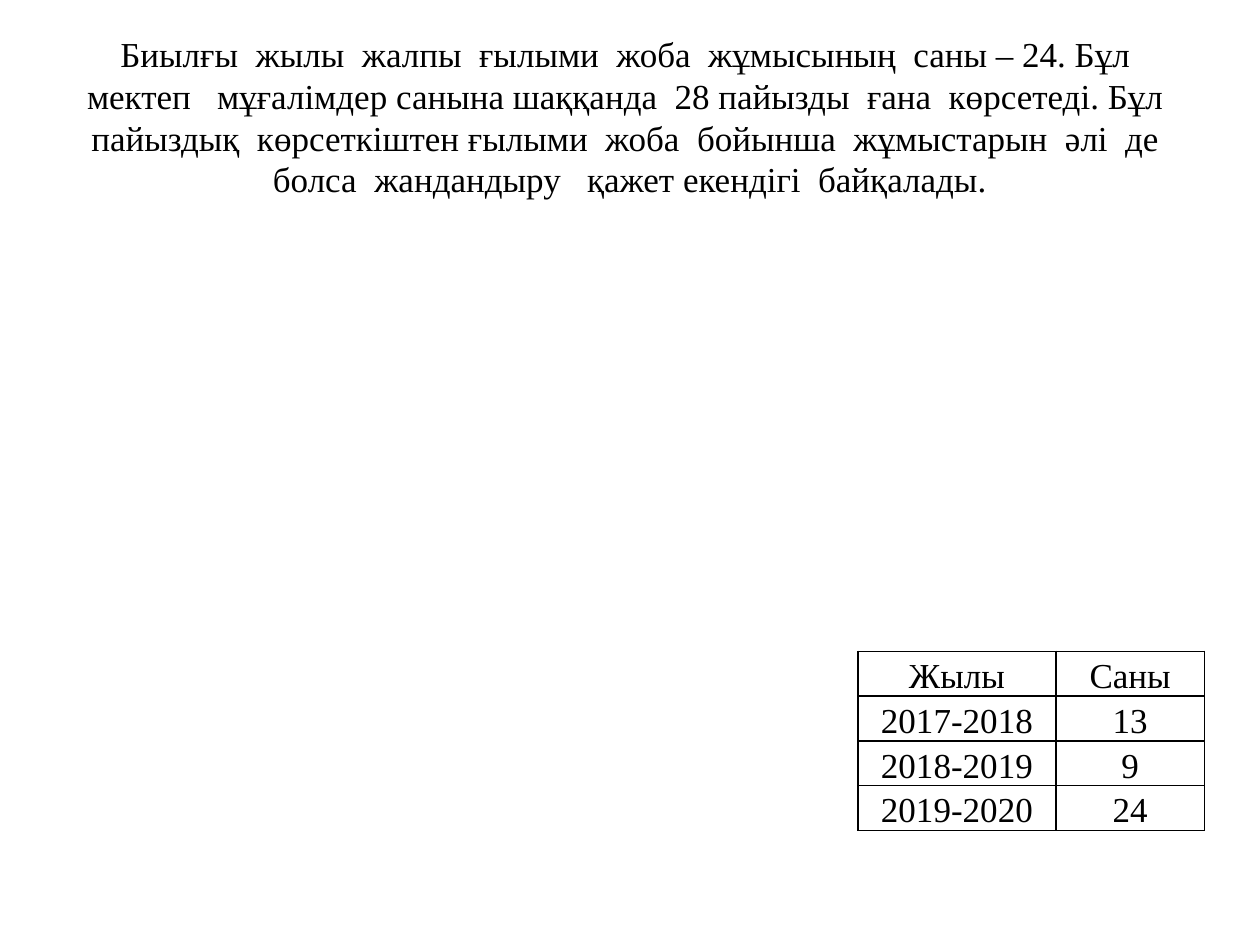
from lxml import etree
from pptx import Presentation
from pptx.dml.color import RGBColor
from pptx.enum.text import MSO_ANCHOR, MSO_AUTO_SIZE, PP_ALIGN
from pptx.oxml.ns import qn
from pptx.util import Pt

BLACK = "000000"


def format_paragraph(paragraph, size, line_spacing):
    paragraph.alignment = PP_ALIGN.CENTER
    paragraph.line_spacing = line_spacing
    for run in paragraph.runs:
        run.font.name = "Times New Roman"
        run.font.size = Pt(size)
        run.font.color.rgb = RGBColor.from_string(BLACK)


def add_borders(cell, color, width):
    properties = cell._tc.get_or_add_tcPr()
    for position, side in enumerate(("lnL", "lnR", "lnT", "lnB")):
        line = etree.Element(qn(f"a:{side}"), w=str(Pt(width)))
        fill = etree.SubElement(line, qn("a:solidFill"))
        etree.SubElement(fill, qn("a:srgbClr"), val=color)
        properties.insert(position, line)


presentation = Presentation()
presentation.slide_width = Pt(720)
presentation.slide_height = Pt(540)
slide = presentation.slides.add_slide(presentation.slide_layouts[5])

# Title paragraph
title = slide.shapes.title
title.left, title.top, title.width, title.height = Pt(36), Pt(21.6), Pt(648), Pt(90)
title_frame = title.text_frame
title_frame.text = (
    "Биылғы  жылы  жалпы  ғылыми  жоба  жұмысының  саны – 24. "
    "Бұл  мектеп   мұғалімдер санына шаққанда  28 пайызды  ғана  көрсетеді. "
    "Бұл  пайыздық  көрсеткіштен ғылыми  жоба  бойынша  жұмыстарын  әлі  де  "
    "болса  жандандыру   қажет екендігі  байқалады."
)
title_frame.word_wrap = True
title_frame.auto_size = MSO_AUTO_SIZE.NONE
title_frame.vertical_anchor = MSO_ANCHOR.MIDDLE
format_paragraph(title_frame.paragraphs[0], 20, Pt(23.8))

# Table of projects by school year
rows = [("Жылы", "Саны"), ("2017-2018", "13"), ("2018-2019", "9"), ("2019-2020", "24")]
column_widths = [113, 85]
row_height = 25.6
table = slide.shapes.add_table(
    len(rows), len(column_widths), Pt(490.3), Pt(372.2),
    Pt(sum(column_widths)), Pt(row_height * len(rows)),
).table
for column, width in zip(table.columns, column_widths):
    column.width = Pt(width)

for row_index, values in enumerate(rows):
    table.rows[row_index].height = Pt(row_height)
    for column_index, value in enumerate(values):
        cell = table.cell(row_index, column_index)
        cell.text = value
        cell.fill.background()
        cell.margin_left = cell.margin_right = Pt(5)
        cell.margin_top = cell.margin_bottom = 0
        paragraph = cell.text_frame.paragraphs[0]
        format_paragraph(paragraph, 20, 1.15)
        paragraph.runs[0].font.bold = False
        add_borders(cell, BLACK, 1)

presentation.save("out.pptx")
